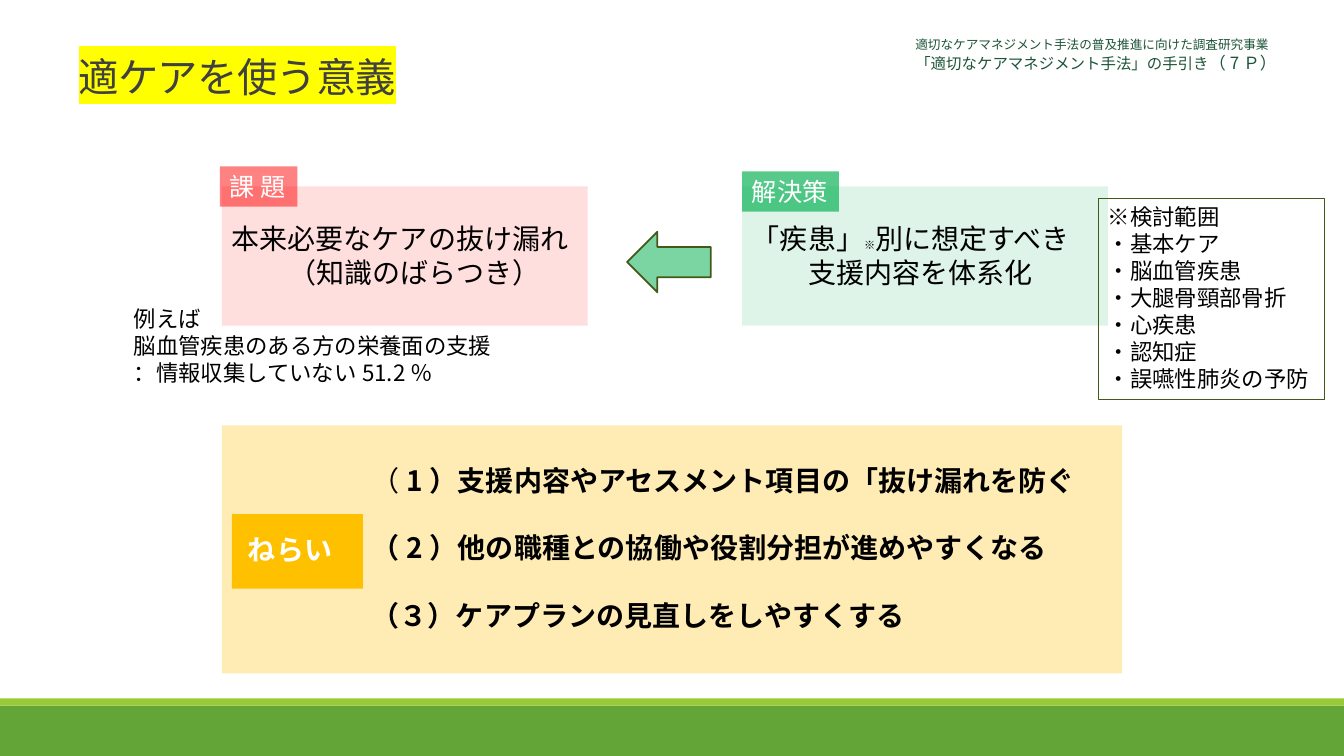
from dataclasses import dataclass

from lxml import etree
from pptx import Presentation
from pptx.dml.color import RGBColor
from pptx.enum.shapes import MSO_SHAPE
from pptx.enum.text import MSO_ANCHOR, PP_ALIGN
from pptx.oxml.ns import qn
from pptx.util import Inches, Pt

RECTANGLE = MSO_SHAPE.RECTANGLE
LEFT_ARROW = MSO_SHAPE.LEFT_ARROW
TOP = MSO_ANCHOR.TOP
BOTTOM = MSO_ANCHOR.BOTTOM
LEFT = PP_ALIGN.LEFT

BLACK = RGBColor(0x00, 0x00, 0x00)
WHITE = RGBColor(0xFF, 0xFF, 0xFF)
CHARCOAL = RGBColor(0x40, 0x40, 0x40)
RED = RGBColor(0xFF, 0x00, 0x00)
GREEN = RGBColor(0x00, 0xB0, 0x50)
AMBER = RGBColor(0xFF, 0xC0, 0x00)
OLIVE = RGBColor(0x43, 0x59, 0x19)
DARK_GREEN = RGBColor(0x1C, 0x54, 0x38)
FOOTER_GREEN = RGBColor(0x63, 0xA5, 0x37)
FOOTER_LIME = RGBColor(0x99, 0xCB, 0x38)
HIGHLIGHT = "FFFF00"

CJK_FONT = "Noto Sans CJK JP"
LATIN_FONT = "Calibri"
LINE_FACTOR = 1.2


@dataclass
class Span:
    text: str
    size: float
    color: RGBColor = BLACK
    bold: bool = False
    font: str = CJK_FONT


@dataclass
class Para:
    spans: list[Span]
    indent: float = 0
    before: float = 0


@dataclass
class Panel:
    place: tuple[float, float, float, float]
    paras: list[Para]
    fill: RGBColor | None = None
    opacity: int = 100
    line: RGBColor | None = None
    line_width: float = 0.25
    left_inset: float = 0.1
    top_inset: float = 0.05
    kind: MSO_SHAPE = RECTANGLE


def plain(text: str, size: float, **options) -> Para:
    return Para([Span(text, size, **options)])


def label(text: str) -> list[Para]:
    return [plain(text, 18, color=WHITE, font=LATIN_FONT)]


def format_span(run, span: Span) -> None:
    values = {"size": Pt(span.size), "bold": span.bold, "name": span.font}
    for name, value in values.items():
        setattr(run.font, name, value)
    run.font.color.rgb = span.color
    latin = run.font._element.find(qn("a:latin"))
    east_asian = etree.Element(qn("a:ea"), typeface=CJK_FONT)
    latin.addnext(east_asian)


def write_paras(frame, paras: list[Para]) -> None:
    for index, para in enumerate(paras):
        paragraph = frame.add_paragraph() if index else frame.paragraphs[0]
        largest = max(span.size for span in para.spans)
        values = {
            "alignment": LEFT,
            "line_spacing": Pt(largest * LINE_FACTOR),
            "space_before": Pt(para.before),
        }
        for name, value in values.items():
            setattr(paragraph, name, value)
        if para.indent:
            paragraph._p.get_or_add_pPr().set("marL", str(Inches(para.indent)))
        for span in para.spans:
            run = paragraph.add_run()
            run.text = span.text
            format_span(run, span)


def draw_panel(page, panel: Panel) -> None:
    place = [Inches(value) for value in panel.place]
    if panel.fill is None and panel.line is None:
        box = page.shapes.add_textbox(*place)
    else:
        box = page.shapes.add_shape(panel.kind, *place)
        box.shadow.inherit = False
        if panel.fill is None:
            box.fill.background()
        else:
            box.fill.solid()
            box.fill.fore_color.rgb = panel.fill
        if panel.opacity < 100:
            color = box._element.spPr.find(qn("a:solidFill"))[0]
            etree.SubElement(color, qn("a:alpha"), val=str(panel.opacity * 1000))
        if panel.line is None:
            box.line.fill.background()
        else:
            box.line.color.rgb = panel.line
            box.line.width = Pt(panel.line_width)
    values = {
        "word_wrap": True,
        "vertical_anchor": TOP,
        "margin_left": Inches(panel.left_inset),
        "margin_top": Inches(panel.top_inset),
        "margin_right": 0,
        "margin_bottom": 0,
    }
    for name, value in values.items():
        setattr(box.text_frame, name, value)
    write_paras(box.text_frame, panel.paras)


def draw_title(page) -> None:
    title = page.shapes.title
    places = {"left": 0.68, "top": 0.53, "width": 4.32, "height": 0.51}
    for name, value in places.items():
        setattr(title, name, Inches(value))
    frame = title.text_frame
    frame.vertical_anchor = BOTTOM
    frame.word_wrap = True
    paragraph = frame.paragraphs[0]
    paragraph.alignment = LEFT
    paragraph.line_spacing = 0.75
    paragraph.space_before = Pt(0)
    run = paragraph.add_run()
    run.text = "適ケアを使う意義"
    format_span(run, Span(run.text, 28.8, CHARCOAL))
    properties = run.font._element
    properties.set("spc", "-50")
    highlight = etree.Element(qn("a:highlight"))
    etree.SubElement(highlight, qn("a:srgbClr"), val=HIGHLIGHT)
    properties.find(qn("a:solidFill")).addnext(highlight)


EXAMPLE = ["例えば", "脳血管疾患のある方の栄養面の支援", "：情報収集していない51.2％"]
SCOPE = ["※検討範囲", "・基本ケア", "・脳血管疾患", "・大腿骨頸部骨折",
         "・心疾患", "・認知症", "・誤嚥性肺炎の予防"]
AIMS = [
    [Span("（", 20), Span("1）支援内容やアセスメント項目の「抜け漏れを防ぐ", 20, bold=True)],
    [Span("（2）他の職種との協働や役割分担が進めやすくなる", 20, bold=True)],
    [Span("（３）ケアプランの見直しをしやすくする", 20, bold=True)],
]
SOLUTION = [
    Para([Span("「疾患」", 20), Span("※", 8), Span("別に想定すべき", 20)]),
    Para([Span("支援内容を体系化", 20)], indent=0.56),
]
ISSUE = [
    plain("本来必要なケアの抜け漏れ", 20),
    Para([Span("（知識のばらつき）", 20)], indent=0.56),
]
SOURCE = [
    plain("適切なケアマネジメント手法の普及推進に向けた調査研究事業", 9, color=DARK_GREEN),
    Para([Span("「適切なケアマネジメント手法」の手引き", 11, DARK_GREEN),
          Span("（7Ｐ）", 12, DARK_GREEN)]),
]

PANELS = [
    Panel((0, 7, 13.33, 0.5), [], FOOTER_GREEN),
    Panel((0, 6.93, 13.33, 0.07), [], FOOTER_LIME),
    Panel((1.23, 2.98, 3.99, 0.91), [plain(text, 16) for text in EXAMPLE]),
    Panel((2.2, 4.22, 8.93, 2.46),
          [Para(spans, indent=1.39, before=24 if index else 0)
           for index, spans in enumerate(AIMS)],
          AMBER, 29, top_inset=0.38),
    Panel((7.36, 1.85, 3.63, 1.38), SOLUTION, GREEN, 13, top_inset=0.35),
    Panel((7.36, 1.7, 0.96, 0.4), label("解決策"), GREEN, 66),
    Panel((6.22, 2.3, 0.83, 0.6), [], GREEN, 52, OLIVE, 1.25, kind=LEFT_ARROW),
    Panel((2.3, 5.1, 1.3, 0.74), [plain("ねらい", 20, color=WHITE, bold=True)],
          AMBER, left_inset=0.16, top_inset=0.18),
    Panel((10.89, 1.97, 2.24, 1.99), [plain(text, 16) for text in SCOPE], line=OLIVE),
    Panel((8.98, 0.32, 4.01, 0.45), SOURCE),
    Panel((2.2, 1.85, 3.63, 1.38), ISSUE, RED, 13, top_inset=0.35),
    Panel((2.18, 1.65, 0.77, 0.4), label("課 題"), RED, 49),
]


def main() -> None:
    deck = Presentation()
    deck.slide_width = Inches(13.33)
    deck.slide_height = Inches(7.5)
    page = deck.slides.add_slide(deck.slide_layouts[5])
    draw_title(page)
    for panel in PANELS:
        draw_panel(page, panel)
    deck.save("out.pptx")


if __name__ == "__main__":
    main()
